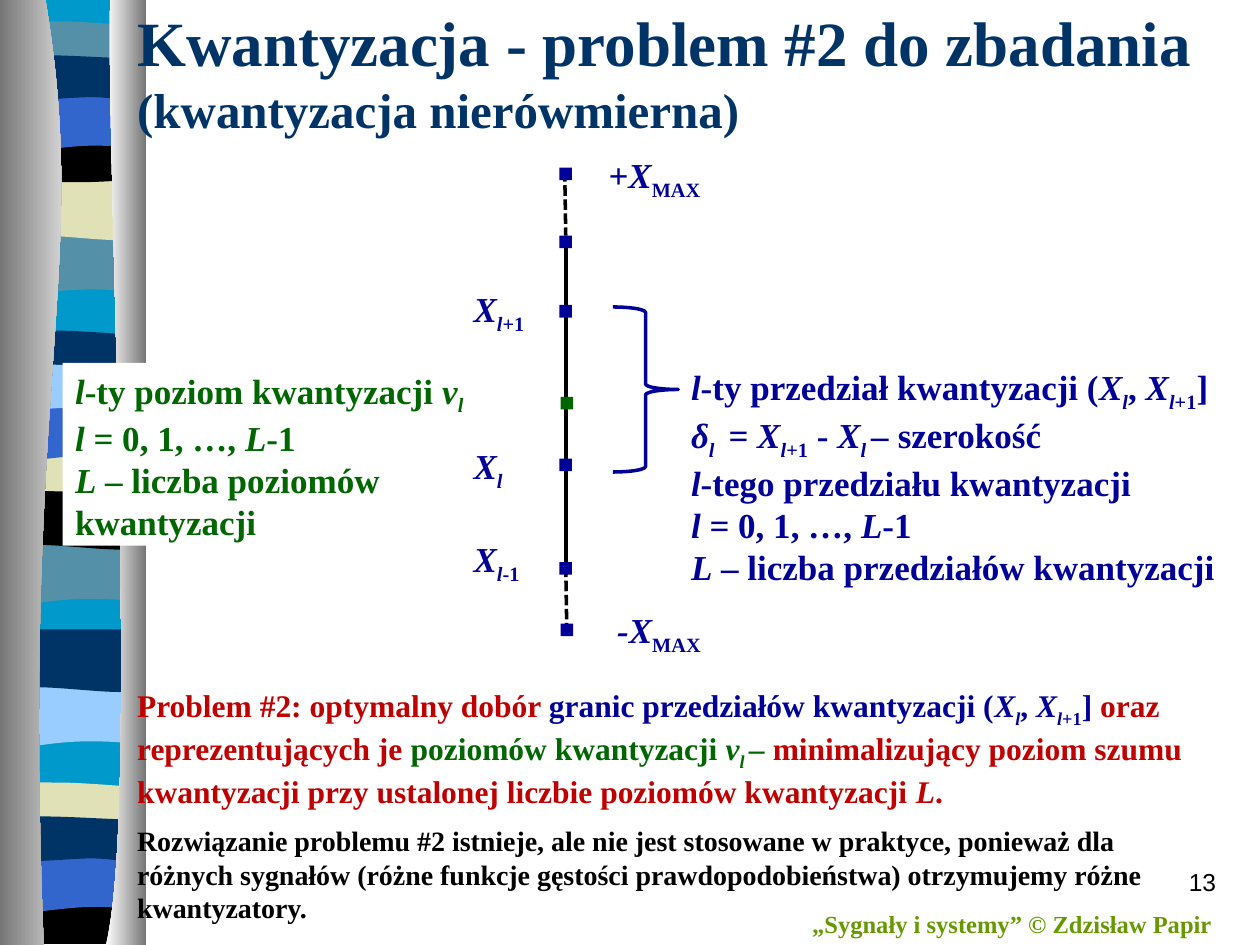
import pptx
import pptx.util
import pptx.dml.color
import pptx.enum.dml
import pptx.enum.shapes
import pptx.enum.text
import pptx.oxml.ns
import lxml.etree

Pt = pptx.util.Pt
qn = pptx.oxml.ns.qn
SHAPE = pptx.enum.shapes.MSO_SHAPE
NAVY, GREEN, RED, BLACK = "000099", "006600", "C00000", "000000"
SERIF = "Times New Roman"

# Wavy bands: base top, lower edge (right to left), upper edge (left to right).
# An edge is a straight pair, or a start point and Bezier segments of three points.
BANDS = {
    "sag": (133.2, [(82, 34), (28, 28), (17, 39.5), (4, 34)], [(4, 0), (82, 0)]),
    "tilt": (101.5, [(82, 34), (69, 39.5), (28, 30), (4, 34)], [(4, 0), (82, 0)]),
    "dome": (11.5, [(82, 21), (69, 24.5), (17, 24.5), (4, 21)],
             [(4, 3.6), (9, 0), (21, 0.7), (34, 0.7), (47, 0.7), (72, 2.9), (82, 3.6)]),
    "dip": (77.8, [(82, 23), (69, 27.4), (17, 27.4), (4, 23)],
            [(4, 0), (52, 3.6), (65, 0), (82, 0)]),
    "arch": (53.3, [(82, 34), (70, 30), (65, 30), (52, 30), (39, 30), (16, 34), (4, 34)],
             [(4, 0), (82, 0)]),
    "roll": (29.5, [(82, 26), (77, 29.5), (65, 26), (52, 26), (39, 26), (12, 29.5), (4, 26)],
             [(4, 3.6), (15, 0), (57, 3.6), (70, 3.6), (83, 3.6), (80, 3.6), (82, 3.6)]),
}
# Each set: shift of the first two bands, shift of the rest, colours
SETS = [
    (0, 0, ["5490A8", "E1E1B7", "5490A8", "000000", "3366CC", "003366"]),
    (176.8, 176.8, ["5490A8", "000000", "003366", "E1E1B7", "3366CC", "99CCFF"]),
    (258.2, 435, ["99CCFF", "003366", "E1E1B7", "000000", "3366CC", "003366"]),
]


def rgb(code):
    return pptx.dml.color.RGBColor.from_string(code)


def outline(slide, *edges):
    """Join edges to one closed outline; edges of four or more points are curved."""
    dots = [(Pt(x), Pt(y)) for edge in edges for x, y in edge]
    pen = slide.shapes.build_freeform(*dots[0], scale=1.0)
    pen.add_line_segments(dots[1:], close=True)
    shape = pen.convert_to_shape()
    shape.shadow.inherit = False
    shape.line.fill.background()
    # Merge each three line ends of a curved edge into one Bezier segment
    steps = list(next(shape._element.iter(qn("a:path"))))
    at = 0
    for edge in edges:
        if len(edge) > 3:
            for n in range(at + 1, at + len(edge), 3):
                bend = lxml.etree.Element(qn("a:cubicBezTo"))
                steps[n].addprevious(bend)
                for step in steps[n:n + 3]:
                    bend.append(step[0])
                    step.getparent().remove(step)
        at += len(edge)
    return shape


def paint(shape, code):
    shape.fill.solid()
    shape.fill.fore_color.rgb = rgb(code)


def block(slide, kind, x, y, w, h):
    shape = slide.shapes.add_shape(kind, Pt(x), Pt(y), Pt(w), Pt(h))
    shape.shadow.inherit = False
    return shape


def dot(slide, x, y, code=NAVY):
    shape = block(slide, SHAPE.RECTANGLE, x, y, 7.2, 7.2)
    paint(shape, code)
    shape.line.fill.background()
    return shape


def link(slide, x1, y1, x2, y2, dash=False):
    line = slide.shapes.add_connector(pptx.enum.shapes.MSO_CONNECTOR.STRAIGHT,
                                      Pt(x1), Pt(y1), Pt(x2), Pt(y2))
    line.line.color.rgb = rgb(BLACK)
    line.line.width = Pt(2)
    if dash:
        line.line.dash_style = pptx.enum.dml.MSO_LINE.SQUARE_DOT
    lxml.etree.SubElement(line._element.spPr, qn("a:effectLst"))
    return line


def write(slide, box, paras, size=20, code=NAVY, bold=True, face=SERIF, wrap=False, gap=0):
    """Runs are (text, marks, colour); marks: i italic, s subscript, b big 36 pt."""
    shape = slide.shapes.add_textbox(*[Pt(v) for v in box])
    frame = shape.text_frame
    frame.word_wrap = wrap
    for n, runs in enumerate(paras):
        para = frame.add_paragraph() if n else frame.paragraphs[0]
        font = para.font
        font.size, font.name, font.bold = Pt(size), face, bold
        font.color.rgb = rgb(code)
        if n and gap:
            para.space_before = Pt(gap)
        for text, marks, *tint in runs:
            if text == "\n":
                para.add_line_break()
                continue
            run = para.add_run()
            run.text = text
            if "i" in marks:
                run.font.italic = True
            if "s" in marks:
                run.font._element.set("baseline", "-25000")
            if "b" in marks:
                run.font.size = Pt(36)
            if tint:
                run.font.color.rgb = rgb(tint[0])
    return shape


def border(slide, high):
    # Striped ribbon
    paint(outline(slide, [(82, high - 2), (4, high - 2)], [(4, 0), (82, 0)]), "0099CC")
    for first, rest, tints in SETS:
        for n, (name, (top, low, up)) in enumerate(BANDS.items()):
            y = top + (first if n < 2 else rest)
            if name == "dip" and y > high - 30:  # the last one ends flat
                low = [(82, 26.6), (4, 26.6)]
            edges = [[(px, py + y) for px, py in edge] for edge in (low, up)]
            paint(outline(slide, *edges), tints[n])
    # Shaded sides
    sides = [([(26, 0), (52, 155), (12, 213), (25, high)], 0, "767676", "FFFFFF"),
             ([(63, 0), (60.5, 90), (80, 465), (60.5, high)], 83.5, "FFFFFF", "767676")]
    for edge, x, start, end in sides:
        fill = outline(slide, edge, [(x, high), (x, 0)]).fill
        fill.gradient()
        fill.gradient_angle = 0
        for stop, code in zip(fill.gradient_stops, (start, end)):
            stop.color.rgb = rgb(code)


def axis(slide, x, y):
    # Lines, then the level marks over them
    upper = link(slide, x + 3, y + 2, x + 3.6, y + 39, True)
    lower = link(slide, x + 3.6, y + 228, x + 4.2, y + 265, True)
    solid = link(slide, x + 3.6, y + 42.5, x + 3.6, y + 232.5)
    marks = [dot(slide, x, y + dy) for dy in (0, 38.9, 78.5, 166.3, 225.4)]
    dot(slide, x + 0.7, y + 260.6)
    dot(slide, x + 0.7, y + 131, GREEN)
    upper.end_connect(marks[1], 0)
    solid.end_connect(marks[4], 2)
    # Labels
    labels = [(263.5, 160.6, 46, [("X", "i"), ("l", "is"), ("+1", "s")]),
              (263.5, 250.6, 32, [("X", "i"), ("l", "is")]),
              (263.5, 303.8, 43, [("X", "i"), ("l", "is"), ("-1", "s")]),
              (340.6, 84.2, 72, [("+X", "i"), ("MAX", "s")]),
              (345.6, 344.2, 67, [("-X", "i"), ("MAX", "s")])]
    for lx, ly, w, runs in labels:
        write(slide, (lx, ly, w, 31.5), [runs])
    # Interval brace
    brace = block(slide, SHAPE.RIGHT_BRACE, x + 30.5, y + 79.6, 37.4, 94.3)
    brace.fill.background()
    brace.line.color.rgb = rgb(NAVY)
    brace.line.width = Pt(2)


def notes(slide, left, right):
    # Level description
    count = [("l ", "i"), ("= 0, 1, …, ", ""), ("L", "i"), ("-1", "")]
    card = write(slide, left, [
        [("l", "i"), ("-ty poziom kwantyzacji ", ""), ("v", "i"), ("l", "is")],
        count,
        [("L", "i"), (" – liczba poziomów", ""), ("\n", ""), ("kwantyzacji", "")]], code=GREEN)
    paint(card, "FFFFFF")
    # Interval description
    write(slide, right, [
        [("l", "i"), ("-ty przedział kwantyzacji (", ""), ("X", "i"), ("l", "is"), (", ", ""),
         ("X", "i"), ("l", "is"), ("+1", "s"), ("]", "")],
        [("δ", "i"), ("l ", "is"), (" = X", "i"), ("l", "is"), ("+1", "s"), (" - ", ""),
         ("X", "i"), ("l ", "is"), ("– ", "i"), ("szerokość", ""), ("\n", ""),
         ("l", "i"), ("-tego przedziału kwantyzacji", "")],
        count,
        [("L", "i"), (" – liczba przedziałów kwantyzacji", "")]])


def task(slide, box):
    shape = write(slide, box, [
        [("Problem #2: optymalny dobór ", ""), ("granic przedziałów kwantyzacji (", "", NAVY),
         ("X", "i", NAVY), ("l", "is", NAVY), (", ", "", NAVY), ("X", "i", NAVY),
         ("l", "is", NAVY), ("+1", "s", NAVY), ("] ", "", NAVY),
         ("oraz reprezentujących je ", ""), ("poziomów kwantyzacji ", "", GREEN),
         ("v", "i", GREEN), ("l ", "is", GREEN), ("– ", "i", GREEN),
         ("minimalizujący poziom szumu kwantyzacji przy ustalonej liczbie "
          "poziomów kwantyzacji ", ""), ("L", "i"), (".", "")],
        [("Rozwiązanie problemu #2 istnieje, ale nie jest stosowane w praktyce, ponieważ dla "
          "różnych sygnałów (różne funkcje gęstości prawdopodobieństwa) otrzymujemy różne "
          "kwantyzatory.", "")]], 18, RED, wrap=True, gap=8)
    last = shape.text_frame.paragraphs[1].font
    last.size = Pt(16)
    last.color.rgb = rgb(BLACK)


def footer(slide):
    write(slide, (457, 516.2, 245.5, 24.5),
          [[("„Sygnały i systemy” © Zdzisław Papir", "")]], 14, "669900")
    page = write(slide, (552.2, 491.8, 149.8, 36), [[("13", "")]], 14, BLACK, False, "Arial", True)
    page.text_frame.paragraphs[0].alignment = pptx.enum.text.PP_ALIGN.RIGHT


def main():
    deck = pptx.Presentation()
    deck.slide_width, deck.slide_height = Pt(720), Pt(540)
    slide = deck.slides.add_slide(deck.slide_layouts[6])
    border(slide, 540)
    write(slide, (71.3, -1.4, 625.7, 85), [[
        ("Kwantyzacja - problem #2 do zbadania", "b"), ("\n", ""),
        ("(kwantyzacja nierówmierna)", "")]], 28, "003366", wrap=True)
    notes(slide, (35.8, 207.4, 238.3, 104.4), (387.8, 205.6, 316, 128))
    axis(slide, 319.7, 95.8)
    task(slide, (71.3, 388.5, 630.7, 140.4))
    footer(slide)
    deck.save("out.pptx")


if __name__ == "__main__":
    main()
